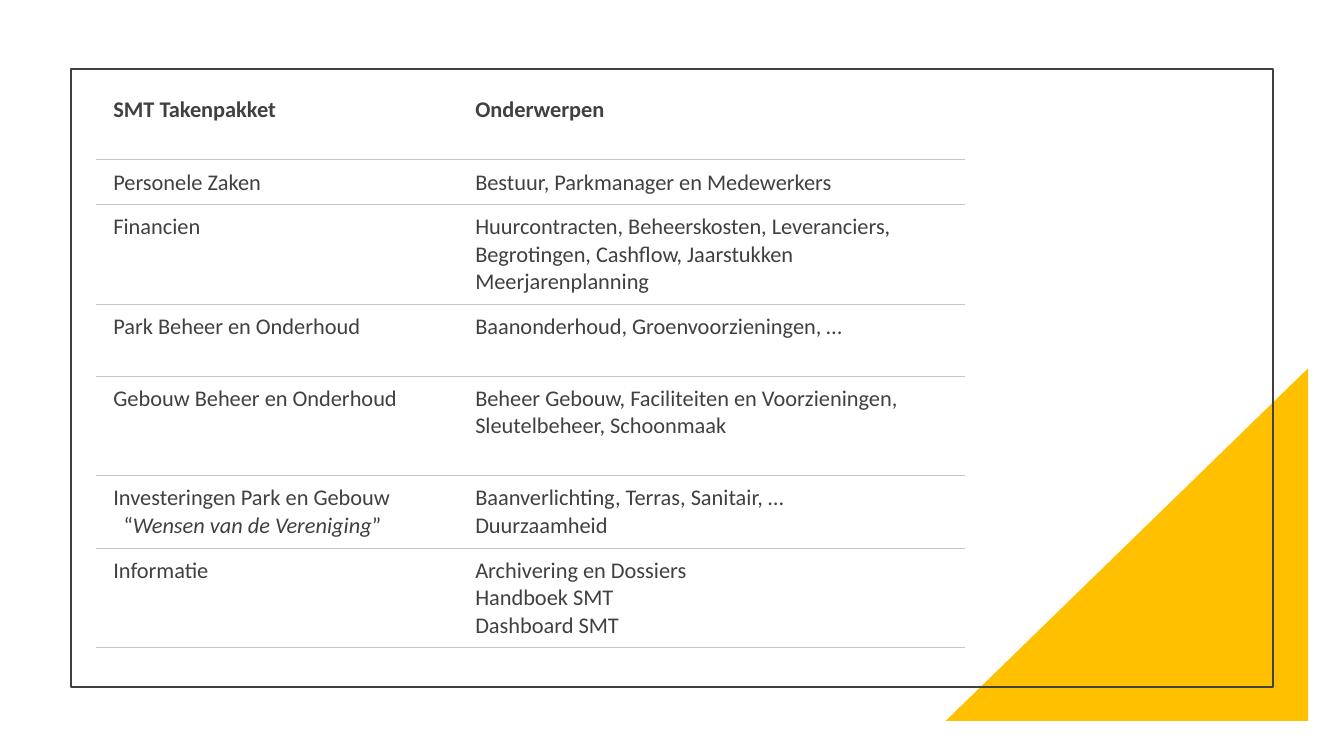
from lxml import etree
from pptx import Presentation
from pptx.dml.color import RGBColor
from pptx.enum import shapes
from pptx.oxml import ns
from pptx.util import Pt

HUES = {"ink": "404040", "gold": "FFC000", "rule": "C7C6C1"}
MARGINS = {"margin_left": 12.5, "margin_right": 9.5,
           "margin_top": 6.25, "margin_bottom": 6.25}
LINE, PAD = 19.5, 12.5  # text line height, top and bottom margin together
PLAIN = "{2D5ABB26-0587-4C30-8999-92F81FD0307C}"  # no style, no grid

# Text lines a row has room for, left cell, right cell
ROWS = [
    (2, ["SMT Takenpakket"], ["Onderwerpen"]),
    (1, ["Personele Zaken"], ["Bestuur, Parkmanager en Medewerkers"]),
    (3, ["Financien"], ["Huurcontracten, Beheerskosten, Leveranciers,",
                        "Begrotingen, Cashflow, Jaarstukken",
                        "Meerjarenplanning"]),
    (2, ["Park Beheer en Onderhoud"], ["Baanonderhoud, Groenvoorzieningen, …"]),
    (3, ["Gebouw Beheer en Onderhoud"],
     ["Beheer Gebouw, Faciliteiten en Voorzieningen,",
      "Sleutelbeheer, Schoonmaak"]),
    (2, ["Investeringen Park en Gebouw", ("“", "Wensen van de Vereniging", "”")],
     ["Baanverlichting, Terras, Sanitair, …", "Duurzaamheid"]),
    (3, ["Informatie"], ["Archivering en Dossiers", "Handboek SMT",
                         "Dashboard SMT"]),
]


def tint(name):
    return RGBColor.from_string(HUES[name])


class Deck:
    def __init__(self, wide, high):
        self.prs = Presentation()
        self.prs.slide_width, self.prs.slide_height = Pt(wide), Pt(high)
        self.slide = self.prs.slides.add_slide(self.prs.slide_layouts[6])
        self.font = {"name": "Calibri", "size": Pt(16)}

    def shape(self, kind, box, fill=None, line=None, flip=False):
        item = self.slide.shapes.add_shape(kind, *map(Pt, box))
        item.shadow.inherit = False
        if fill:
            item.fill.solid()
            item.fill.fore_color.rgb = tint(fill)
        else:
            item.fill.background()
        if line:
            item.line.color.rgb = tint(line)
            item.line.width = Pt(1.5)
        else:
            item.line.fill.background()
        if flip:
            item._element.spPr.find(ns.qn("a:xfrm")).set("flipH", "1")

    def words(self, para, line, bold):
        """Fill a paragraph; a tuple is an indented quote, its middle in italics."""
        quote = isinstance(line, tuple)
        if quote:
            para._p.get_or_add_pPr().set("marL", str(Pt(7.25)))
        for i, part in enumerate(line if quote else [line]):
            run = para.add_run()
            run.text = part
            look = {**self.font, "bold": bold, "italic": quote and i == 1}
            for key, val in look.items():
                setattr(run.font, key, val)
            run.font.color.rgb = tint("ink")

    def edge(self, cell, sides):
        """Rule the given sides of a cell and clear the others."""
        props = cell._tc.get_or_add_tcPr()
        for i, side in enumerate("LRTB"):
            line = etree.Element(ns.qn("a:ln" + side), w=str(Pt(0.75)))
            if side in sides:
                fill = etree.SubElement(line, ns.qn("a:solidFill"))
                etree.SubElement(fill, ns.qn("a:srgbClr"), val=HUES["rule"])
            else:
                etree.SubElement(line, ns.qn("a:noFill"))
            props.insert(i, line)

    def table(self, left, top, cols, rows):
        highs = [PAD + LINE * room for room, *_ in rows]
        frame = self.slide.shapes.add_table(
            len(rows), len(cols), Pt(left), Pt(top), Pt(sum(cols)), Pt(sum(highs)))
        grid = frame.table
        grid.first_row = grid.horz_banding = False
        grid._tbl.tblPr.find(ns.qn("a:tableStyleId")).text = PLAIN
        for col, wide in zip(grid.columns, cols):
            col.width = Pt(wide)
        for r, (high, (_, *cells)) in enumerate(zip(highs, rows)):
            grid.rows[r].height = Pt(high)
            for c, lines in enumerate(cells):
                cell = grid.cell(r, c)
                cell.fill.background()
                for key, val in MARGINS.items():
                    setattr(cell, key, Pt(val))
                self.edge(cell, "TB" if r else "B")
                body = cell.text_frame
                for i, line in enumerate(lines):
                    para = body.add_paragraph() if i else body.paragraphs[0]
                    self.words(para, line, bold=r == 0)


def main():
    deck = Deck(960, 540)
    kind = shapes.MSO_SHAPE
    deck.shape(kind.RIGHT_TRIANGLE, (675.5, 263, 259, 252), fill="gold", flip=True)
    deck.shape(kind.RECTANGLE, (50.5, 49, 859, 441.5), line="ink")
    deck.table(68.5, 62.75, (258.5, 362), ROWS)
    deck.prs.save("out.pptx")


if __name__ == "__main__":
    main()
